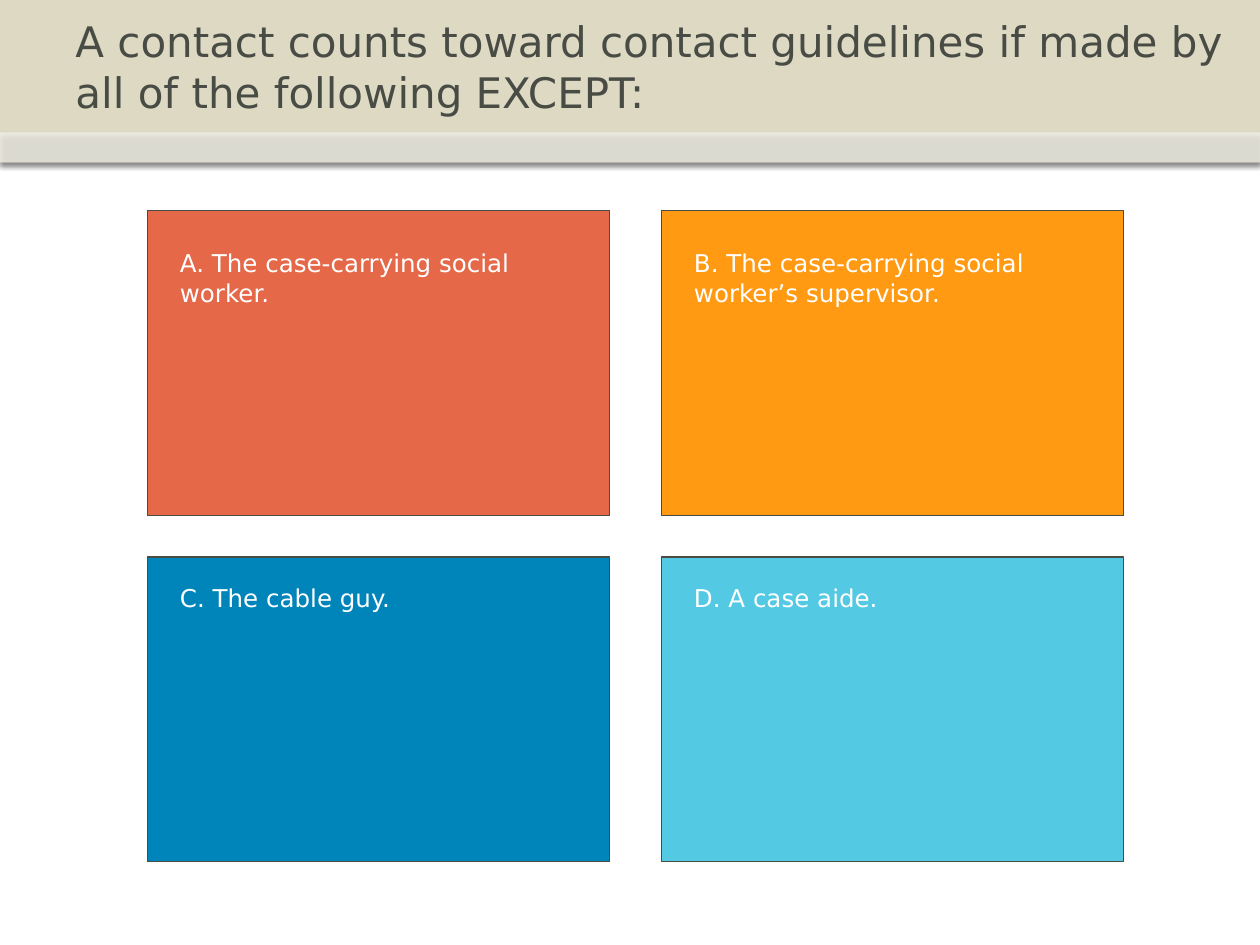
from lxml import etree
from pptx import Presentation
from pptx.dml.color import RGBColor
from pptx.enum.shapes import MSO_SHAPE
from pptx.enum.text import MSO_ANCHOR
from pptx.oxml.ns import qn
from pptx.util import Inches, Pt

FONT = "DejaVu Sans"
SAND = RGBColor(0xDD, 0xD9, 0xC3)
WHITE = RGBColor(0xFF, 0xFF, 0xFF)
DARK = RGBColor(0x48, 0x4C, 0x45)
RED = RGBColor(0xE5, 0x68, 0x49)
ORANGE = RGBColor(0xFF, 0x9A, 0x12)
BLUE = RGBColor(0x00, 0x85, 0xBA)
CYAN = RGBColor(0x53, 0xC9, 0xE4)

TITLE = "A contact counts toward contact guidelines if made by all of the following EXCEPT:"
CARD_WIDTH, CARD_HEIGHT = 3.67, 2.42
COLUMNS = (1.17, 5.25)
ROWS = (1.67, 4.42)

# column, row, colour, answer, text top offset, text width, text height
ANSWERS = [
    (0, 0, RED, "A. The case-carrying social worker.", 0.25, 3, 0.57),
    (1, 0, ORANGE, "B. The case-carrying social worker’s supervisor.", 0.25, 3.17, 0.57),
    (0, 1, BLUE, "C. The cable guy.", 0.16, 3.25, 0.34),
    (1, 1, CYAN, "D. A case aide.", 0.16, 3.33, 0.34),
]


def add_rectangle(slide, left, top, width, height, color, outline=None):
    shape = slide.shapes.add_shape(
        MSO_SHAPE.RECTANGLE, Inches(left), Inches(top), Inches(width), Inches(height))
    shape.fill.solid()
    shape.fill.fore_color.rgb = color
    if outline is None:
        shape.line.fill.background()
    else:
        shape.line.color.rgb = outline
        shape.line.width = Pt(0.75)
    shape.shadow.inherit = False
    return shape


def set_opacity(color_element, percent):
    etree.SubElement(color_element, qn("a:alpha"), val=str(percent * 1000))


def add_drop_shadow(shape):
    """Cast a soft black shadow straight down."""
    effects = shape._element.spPr.find(qn("a:effectLst"))
    shadow = etree.SubElement(
        effects, qn("a:outerShdw"), blurRad=str(Pt(3.1)), dist=str(Pt(1.8)),
        dir="5400000", rotWithShape="0")
    set_opacity(etree.SubElement(shadow, qn("a:srgbClr"), val="000000"), 35)


def add_text(slide, left, top, width, height, content, size, color,
             anchor=MSO_ANCHOR.TOP):
    box = slide.shapes.add_textbox(
        Inches(left), Inches(top), Inches(width), Inches(height))
    frame = box.text_frame
    frame.word_wrap = True
    frame.vertical_anchor = anchor
    frame.text = content
    font = frame.paragraphs[0].runs[0].font
    font.name = FONT
    font.size = Pt(size)
    font.color.rgb = color


def add_header(slide):
    banner = add_rectangle(slide, 0, 0, 10, 1.29, SAND)
    strip = add_rectangle(slide, 0, 1.05, 10, 0.24, WHITE)
    set_opacity(strip._element.spPr.find(qn("a:solidFill"))[0], 53)
    for shape in (banner, strip):
        add_drop_shadow(shape)
    add_text(slide, 0.5, 0, 9.42, 1.05, TITLE, 24, DARK, MSO_ANCHOR.MIDDLE)


def add_answer(slide, column, row, color, answer, offset, width, height):
    left, top = COLUMNS[column], ROWS[row]
    add_rectangle(slide, left, top, CARD_WIDTH, CARD_HEIGHT, color, DARK)
    add_text(slide, left + 0.16, top + offset, width, height, answer, 14, WHITE)


def main():
    presentation = Presentation()
    presentation.slide_width = Inches(10)
    presentation.slide_height = Inches(7.5)
    slide = presentation.slides.add_slide(presentation.slide_layouts[6])
    add_header(slide)
    for answer in ANSWERS:
        add_answer(slide, *answer)
    presentation.save("out.pptx")


if __name__ == "__main__":
    main()
